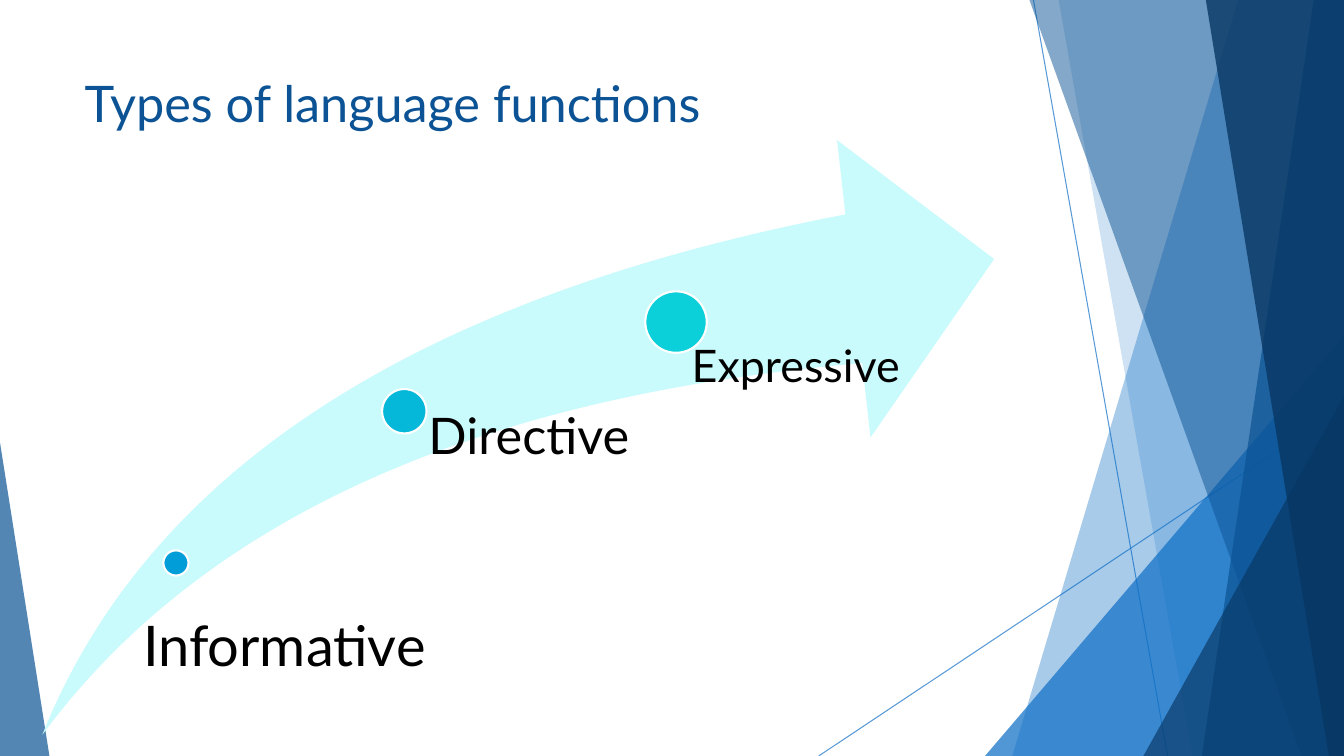
from dataclasses import dataclass

import lxml.etree
import pptx
import pptx.dml.color
import pptx.enum.shapes
import pptx.enum.text
import pptx.oxml.ns
import pptx.util

RGBColor = pptx.dml.color.RGBColor
Shapes = pptx.enum.shapes.MSO_SHAPE
qn = pptx.oxml.ns.qn

EMU_PER_PX = 9144
WIDTH, HEIGHT = 1333, 750
FONT = "Lato"

BLUE = RGBColor(0x0F, 0x6F, 0xC6)
DEEP_BLUE = RGBColor(0x0B, 0x53, 0x94)
NAVY = RGBColor(0x08, 0x37, 0x63)
PALE_CYAN = RGBColor(0xC9, 0xFA, 0xFC)
SKY = RGBColor(0x00, 0x9D, 0xD9)
AZURE = RGBColor(0x05, 0xB7, 0xD9)
TURQUOISE = RGBColor(0x0B, 0xD0, 0xD9)
WHITE = RGBColor(0xFF, 0xFF, 0xFF)
BLACK = RGBColor(0x00, 0x00, 0x00)


@dataclass(frozen=True)
class Ray:
    start: tuple[int, int]
    end: tuple[int, int]


@dataclass(frozen=True)
class Band:
    top_x: int
    bottom_x: int
    color: RGBColor
    opacity: int


@dataclass(frozen=True)
class Wedge:
    left: int
    top: int
    width: int
    apex: float
    color: RGBColor
    opacity: int


@dataclass(frozen=True)
class Stage:
    label: str
    size: int
    dot: tuple[int, int, int]
    color: RGBColor
    box: tuple[int, int, int, int]
    inset: int


RAYS = [Ray((1025, 0), (1158, 750)), Ray((1333, 403), (812, 750))]

FACETS = [
    Band(1228, 1004, BLUE, 36),
    Band(1050, 1183, BLUE, 20),
    Wedge(977, 333, 356, 1, BLUE, 72),
    Band(1021, 1291, DEEP_BLUE, 50),
    Band(1303, 1192, DEEP_BLUE, 70),
    Band(1196, 1318, NAVY, 80),
    Wedge(1134, 393, 199, 1, NAVY, 66),
    Wedge(0, 439, 49, 0, DEEP_BLUE, 70),
]

STAGES = [
    Stage("Informative", 40, (162, 546, 25), SKY, (129, 613, 311, 62), 13),
    Stage("Directive", 36, (379, 386, 44), AZURE, (401, 408, 227, 321), 24),
    Stage("Expressive", 32, (640, 289, 61), TURQUOISE, (653, 341, 261, 389), 33),
]


def px(*values: int) -> list[int]:
    return [value * EMU_PER_PX for value in values]


def set_alpha(fmt, opacity: int) -> None:
    color = fmt._xPr.find(".//" + qn("a:srgbClr"))
    lxml.etree.SubElement(color, qn("a:alpha"), val=str(opacity * 1000))


def paint(sp, color: RGBColor, opacity: int = 100) -> None:
    sp.shadow.inherit = False
    sp.fill.solid()
    sp.fill.fore_color.rgb = color
    if opacity < 100:
        set_alpha(sp.fill, opacity)
    sp.line.fill.background()


def write_text(sp, text: str, *, size: int, color: RGBColor,
               inset: tuple[int, int, int, int], spacing: float = 1.0) -> None:
    tf = sp.text_frame
    tf.word_wrap = True
    tf.auto_size = pptx.enum.text.MSO_AUTO_SIZE.NONE
    tf.vertical_anchor = pptx.enum.text.MSO_ANCHOR.TOP
    tf.margin_left, tf.margin_top, tf.margin_right, tf.margin_bottom = px(*inset)
    p = tf.paragraphs[0]
    p.alignment = pptx.enum.text.PP_ALIGN.LEFT
    p.line_spacing = spacing
    r = p.add_run()
    r.text = text
    r.font.name = FONT
    r.font.size = pptx.util.Pt(size)
    r.font.color.rgb = color


def draw_ray(slide, ray: Ray) -> None:
    line = slide.shapes.add_connector(
        pptx.enum.shapes.MSO_CONNECTOR.STRAIGHT, *px(*ray.start, *ray.end))
    line.line.width = pptx.util.Pt(0.75)
    line.line.color.rgb = BLUE
    color = line._element.spPr.find(".//" + qn("a:srgbClr"))
    lxml.etree.SubElement(color, qn("a:alpha"), val="70000")
    lxml.etree.SubElement(line._element.spPr, qn("a:effectLst"))


def draw_band(slide, band: Band) -> None:
    builder = slide.shapes.build_freeform(*px(band.top_x, 0))
    corners = [(WIDTH, 0), (WIDTH, HEIGHT), (band.bottom_x, HEIGHT)]
    builder.add_line_segments([px(*corner) for corner in corners], close=True)
    paint(builder.convert_to_shape(), band.color, band.opacity)


def draw_wedge(slide, wedge: Wedge) -> None:
    sp = slide.shapes.add_shape(
        Shapes.ISOSCELES_TRIANGLE,
        *px(wedge.left, wedge.top, wedge.width, HEIGHT - wedge.top))
    sp.adjustments[0] = wedge.apex
    paint(sp, wedge.color, wedge.opacity)


def draw_swoosh(slide) -> None:
    sp = slide.shapes.add_shape(Shapes.SWOOSH_ARROW, *px(42, 139, 944, 590))
    sp.adjustments[0] = 0.25
    sp.adjustments[1] = 0.25
    paint(sp, PALE_CYAN)


def draw_stage(slide, stage: Stage) -> None:
    left, top, diameter = stage.dot
    dot = slide.shapes.add_shape(Shapes.OVAL, *px(left, top, diameter, diameter))
    paint(dot, stage.color)
    dot.line.color.rgb = WHITE
    dot.line.width = pptx.util.Pt(1.5)
    label = slide.shapes.add_textbox(*px(*stage.box))
    write_text(label, stage.label, size=stage.size, color=BLACK,
               inset=(stage.inset, 0, 0, 0), spacing=0.9)


def main() -> None:
    prs = pptx.Presentation()
    prs.slide_width, prs.slide_height = px(WIDTH, HEIGHT)
    slide = prs.slides.add_slide(prs.slide_layouts[5])

    for ray in RAYS:
        draw_ray(slide, ray)
    for facet in FACETS:
        if isinstance(facet, Band):
            draw_band(slide, facet)
        else:
            draw_wedge(slide, facet)

    title = slide.shapes.title
    title.left, title.top, title.width, title.height = px(74, 67, 940, 144)
    write_text(title, "Types of language functions", size=36,
               color=DEEP_BLUE, inset=(10, 5, 10, 5))

    draw_swoosh(slide)
    for stage in STAGES:
        draw_stage(slide, stage)
    prs.save("out.pptx")


if __name__ == "__main__":
    main()
